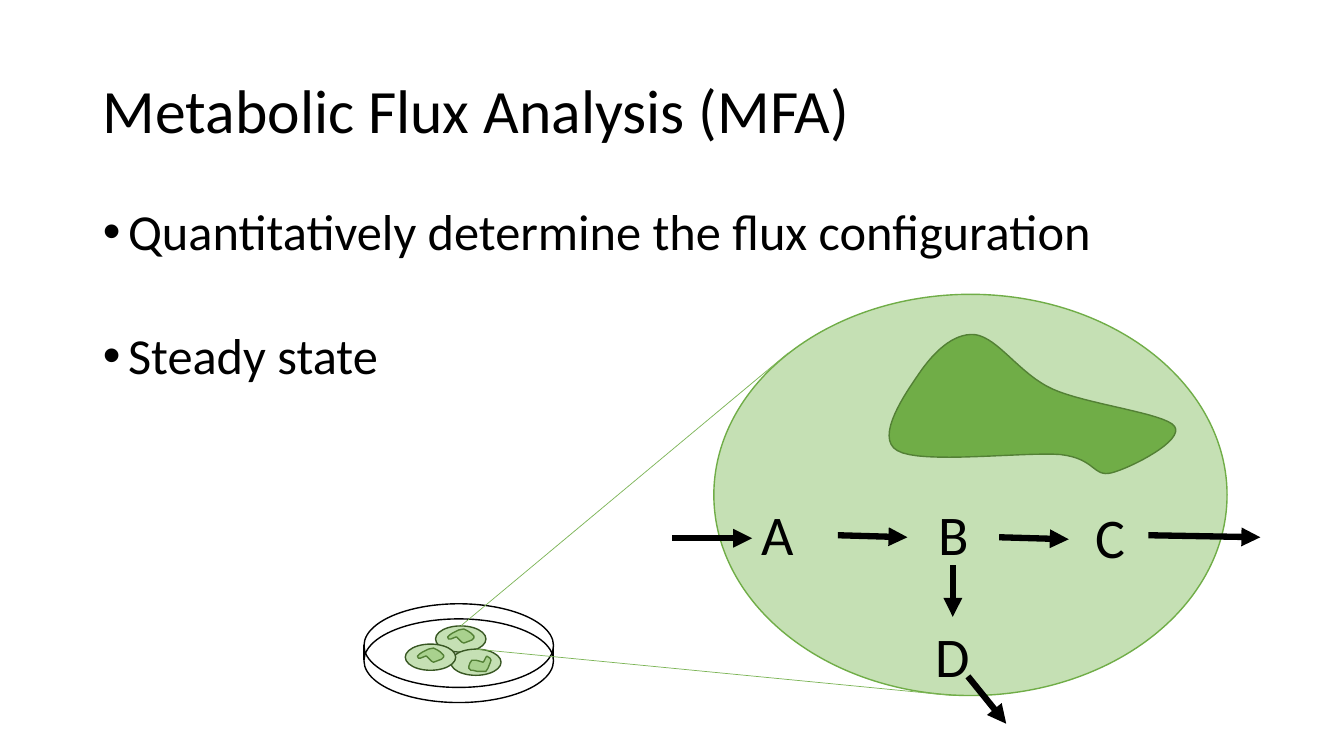
"""Build a slide on metabolic flux analysis with a dish and one enlarged cell."""
from dataclasses import dataclass
from typing import Optional

from lxml.etree import SubElement
from pptx import Presentation
from pptx.dml.color import RGBColor
from pptx.enum.shapes import MSO_CONNECTOR, MSO_SHAPE
from pptx.enum.text import MSO_ANCHOR, MSO_AUTO_SIZE, PP_ALIGN
from pptx.oxml.ns import qn
from pptx.util import Emu, Pt

SCALE = 9144
FONT = "Calibri"
BLACK = RGBColor(0x00, 0x00, 0x00)
PALE = RGBColor(0xC5, 0xE0, 0xB4)
LIGHT = RGBColor(0xA9, 0xD1, 0x8E)
GREEN = RGBColor(0x70, 0xAD, 0x47)
MOSS = RGBColor(0x53, 0x80, 0x35)
DARK = RGBColor(0x38, 0x57, 0x23)
BEAM = RGBColor(0x7C, 0xB4, 0x56)

Point = tuple[float, float]


@dataclass(frozen=True)
class Oval:
    left: int
    top: int
    width: int
    height: int
    edge: RGBColor
    fill: Optional[RGBColor] = None


@dataclass(frozen=True)
class Line:
    start: Point
    end: Point
    color: RGBColor = BLACK
    width: float = 4.5
    arrow: bool = True


@dataclass(frozen=True)
class Node:
    name: str
    left: int
    top: int


@dataclass(frozen=True)
class Cell:
    left: int
    top: int
    core: list[Point]


BEAN = [
    (446, 630), (449, 628), (455, 625), (460, 624), (464, 626), (467, 628),
    (470, 631), (470, 633), (468, 635), (460, 638), (458, 637), (456, 635),
    (453, 632), (452, 632), (447, 634), (445, 634), (444, 632),
]
HOOK = [
    (487, 655), (486, 658), (484, 663), (482, 666), (480, 666), (476, 666),
    (473, 666), (469, 665), (467, 665), (465, 663), (465, 661), (466, 658),
    (468, 655), (472, 655), (476, 656), (479, 657), (480, 656), (482, 652),
    (483, 651), (486, 653),
]
CELLS = [
    Cell(432, 621, BEAN),
    Cell(447, 644, HOOK),
    Cell(402, 639, [(x - 30, y + 19) for x, y in BEAN]),
]
BASE = Oval(361, 614, 188, 83, BLACK)
RIM = Oval(361, 599, 188, 83, BLACK)
ZOOM = Oval(708, 292, 509, 398, GREEN, PALE)
START = (912, 370)
CURVES = [
    [(899, 389), (867, 434), (890, 447)],
    [(913, 461), (1016, 448), (1052, 451)],
    [(1087, 455), (1084, 474), (1103, 469)],
    [(1122, 464), (1175, 437), (1165, 423)],
    [(1156, 410), (1077, 401), (1044, 386)],
    [(1011, 371), (990, 335), (967, 332)],
    [(945, 330), (925, 351), START],
]
NODES = [
    Node("A", 726, 491), Node("B", 900, 491),
    Node("C", 1056, 494), Node("D", 899, 612),
]
FLUXES = [
    Line((667, 534), (746, 534)),
    Line((831, 531), (900, 533)),
    Line((991, 533), (1060, 535)),
    Line((1139, 531), (1250, 533)),
    Line((945, 561), (945, 612)),
    Line((960, 671), (998, 718)),
]
SIDES = [Line((x, 640), (x, 655), BLACK, 1, False) for x in (361, 549)]
BEAMS = [
    Line((457, 621), (782, 350), BEAM, 0.5, False),
    Line((472, 644), (945, 690), BEAM, 0.5, False),
]


def px(size: float) -> Emu:
    return Emu(round(size * SCALE))


def smooth(start: Point, curves: list[list[Point]], count: int = 16) -> list[Point]:
    points = [start]
    for one, two, end in curves:
        first = points[-1]
        for step in range(1, count + 1):
            t = step / count
            u = 1 - t
            mix = (u**3, 3 * u * u * t, 3 * u * t * t, t**3)
            knots = (first, one, two, end)
            points.append((sum(m * k[0] for m, k in zip(mix, knots)),
                           sum(m * k[1] for m, k in zip(mix, knots))))
    return points


def paint(shape, edge: RGBColor, fill: Optional[RGBColor]) -> None:
    shape.shadow.inherit = False
    shape.line.color.rgb = edge
    shape.line.width = Pt(1)
    if fill is None:
        shape.fill.background()
    else:
        shape.fill.solid()
        shape.fill.fore_color.rgb = fill


def draw_oval(shapes, oval: Oval) -> None:
    shape = shapes.add_shape(MSO_SHAPE.OVAL, px(oval.left), px(oval.top),
                             px(oval.width), px(oval.height))
    paint(shape, oval.edge, oval.fill)


def draw_blob(shapes, points: list[Point], fill: RGBColor) -> None:
    spots = [(px(x), px(y)) for x, y in points]
    form = shapes.build_freeform(*spots[0], scale=1.0)
    form.add_line_segments(spots[1:], close=True)
    paint(form.convert_to_shape(), MOSS, fill)


def draw_line(shapes, line: Line) -> None:
    link = shapes.add_connector(MSO_CONNECTOR.STRAIGHT, *map(px, line.start + line.end))
    link.line.color.rgb = line.color
    link.line.width = Pt(line.width)
    if line.arrow:
        SubElement(link.line._get_or_add_ln(), qn("a:tailEnd"), type="triangle")
    SubElement(link._element.spPr, qn("a:effectLst"))


def add_text(para, text: str, size: int) -> None:
    run = para.add_run()
    run.text = text
    run.font.name = FONT
    run.font.size = Pt(size)
    run.font.color.rgb = BLACK


def draw_node(shapes, node: Node) -> None:
    box = shapes.add_textbox(px(node.left), px(node.top), px(91), px(77))
    frame = box.text_frame
    frame.word_wrap = True
    frame.auto_size = MSO_AUTO_SIZE.SHAPE_TO_FIT_TEXT
    para = frame.paragraphs[0]
    para.alignment = PP_ALIGN.CENTER
    add_text(para, node.name, 40)


def set_frame(shape, top: int, height: int, anchor: MSO_ANCHOR):
    shape.left, shape.top = px(92), px(top)
    shape.width, shape.height = px(1150), px(height)
    frame = shape.text_frame
    frame.auto_size = MSO_AUTO_SIZE.NONE
    frame.vertical_anchor = anchor
    return frame


def write_text(slide) -> None:
    title = set_frame(slide.shapes.title, 40, 145, MSO_ANCHOR.MIDDLE).paragraphs[0]
    title.alignment = PP_ALIGN.LEFT
    title.line_spacing = 0.9
    add_text(title, "Metabolic Flux Analysis (MFA)", 44)
    frame = set_frame(slide.placeholders[1], 200, 476, MSO_ANCHOR.TOP)
    items = [("Quantitatively determine the flux configuration", 10), ("Steady state", 50)]
    for rank, (text, gap) in enumerate(items):
        para = frame.add_paragraph() if rank else frame.paragraphs[0]
        para.line_spacing = 0.9
        para.space_before = Pt(gap)
        props = para._p.get_or_add_pPr()
        props.set("marL", str(px(25)))
        props.set("indent", str(px(-25)))
        SubElement(props, qn("a:buFont"), typeface="Arial")
        SubElement(props, qn("a:buChar"), char="•")
        add_text(para, text, 36)


def main() -> None:
    deck = Presentation()
    deck.slide_width, deck.slide_height = px(1333), px(750)
    slide = deck.slides.add_slide(deck.slide_layouts[1])
    shapes = slide.shapes
    write_text(slide)
    draw_oval(shapes, BASE)
    draw_oval(shapes, ZOOM)
    draw_blob(shapes, smooth(START, CURVES), GREEN)
    for node in NODES:
        draw_node(shapes, node)
    for cell in CELLS:
        draw_oval(shapes, Oval(cell.left, cell.top, 50, 26, DARK, PALE))
        draw_blob(shapes, cell.core, LIGHT)
    draw_oval(shapes, RIM)
    for line in FLUXES + SIDES + BEAMS:
        draw_line(shapes, line)
    deck.save("out.pptx")


if __name__ == "__main__":
    main()
